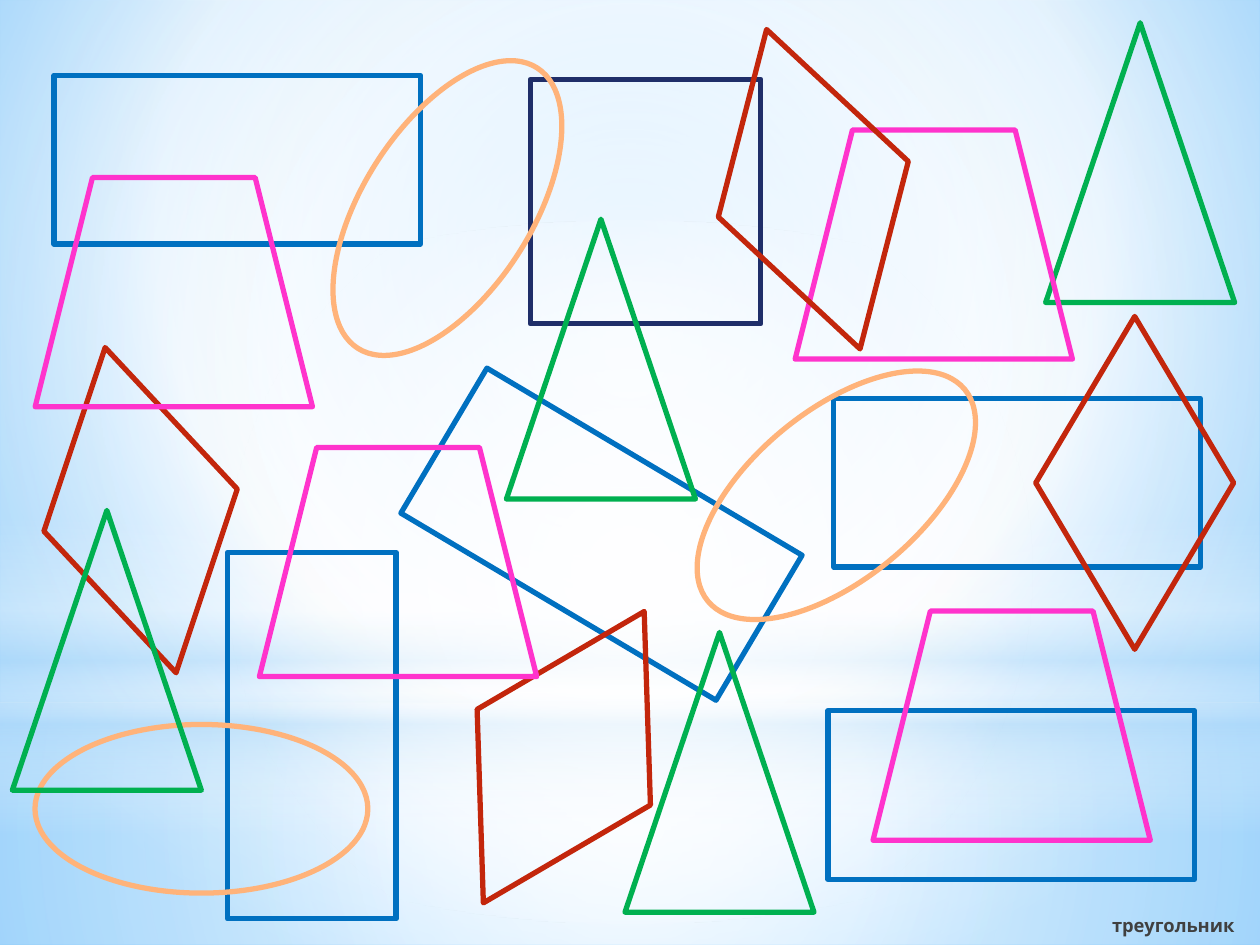
from dataclasses import dataclass

from lxml.etree import SubElement
from pptx import Presentation
from pptx.dml.color import RGBColor
from pptx.enum.shapes import MSO_SHAPE as Preset
from pptx.enum.text import MSO_ANCHOR, PP_ALIGN
from pptx.oxml import parse_xml
from pptx.oxml.ns import nsdecls, qn
from pptx.util import Cm, Pt


@dataclass(frozen=True)
class Theme:
    font: str = "Cabin"
    text_size: float = 10.5
    outline: float = 3
    text: str = "404040"
    navy: str = "1F2E69"
    blue: str = "0070C0"
    red: str = "C3260C"
    green: str = "00B050"
    peach: str = "FFB37A"
    pink: str = "FF33CC"
    white: str = "FFFFFF"
    pale: str = "B4DCFA"
    sky: str = "9ED5FF"
    deep_sky: str = "5BB9FF"


THEME = Theme()
WIDTH, HEIGHT = 25.4, 19.05
HORIZON = 14.17
CENTRE = (50, 50, 50, 50)

# Each glow: preset, box in cm, stops (position %, colour, opacity %), focus
GLOWS = [
    (Preset.RECTANGLE, (0, HORIZON, WIDTH, HEIGHT - HORIZON),
     [(0, THEME.white, 91), (37, THEME.white, 76), (100, THEME.pale, 79)], CENTRE),
    (Preset.RECTANGLE, (0, 0, WIDTH, HORIZON),
     [(0, THEME.white, 89), (48, THEME.white, 62), (100, THEME.pale, 79)], CENTRE),
    (Preset.RECTANGLE, (0, 10.46, WIDTH, 6.35),
     [(0, THEME.white, 0), (29, THEME.white, 30), (45, THEME.pale, 40),
      (55, THEME.white, 26), (65, THEME.pale, 60), (100, THEME.white, 0)], None),
    (Preset.OVAL, (0, 4.45, WIDTH, HORIZON),
     [(0, THEME.white, 100), (56, THEME.white, 0)], CENTRE),
]

# Each kind of figure: preset, colour, width and height in cm
SQUARE = (Preset.RECTANGLE, THEME.navy, 4.65, 4.93)
RECTANGLE = (Preset.RECTANGLE, THEME.blue, 7.39, 3.4)
DIAMOND = (Preset.DIAMOND, THEME.red, 3.99, 6.71)
TRIANGLE = (Preset.ISOSCELES_TRIANGLE, THEME.green, 3.81, 5.64)
ELLIPSE = (Preset.OVAL, THEME.peach, 3.4, 6.71)
TRAPEZOID = (Preset.TRAPEZOID, THEME.pink, 5.59, 4.62)

# Back to front: kind, then left, top and rotation of each figure
FIGURES = [
    (SQUARE, [(10.69, 1.6, 0)]),
    (RECTANGLE, [(1.09, 1.52, 0), (2.59, 13.13, 90), (16.81, 8.03, 0),
                 (8.43, 9.07, 30.7), (16.69, 14.33, 0)]),
    (DIAMOND, [(0.84, 6.93, 347.7), (9.37, 11.91, 28.9), (20.88, 6.38, 0)]),
    (TRIANGLE, [(10.21, 4.42, 0), (21.08, 0.46, 0), (12.6, 12.75, 0)]),
    (ELLIPSE, [(7.32, 0.84, 32.6), (2.36, 12.95, 90), (15.16, 6.63, 50.5)]),
    (TRAPEZOID, [(17.6, 12.32, 0), (5.23, 9.02, 0), (0.71, 3.58, 0),
                 (16.03, 2.62, 0)]),
    (DIAMOND, [(14.4, 0.46, 343.7)]),
    (TRIANGLE, [(0.25, 10.29, 0)]),
]


def set_all(target, values):
    for name, value in values.items():
        setattr(target, name, value)


def set_gradient(fill, element, stops, focus):
    """Fill with a circular gradient around focus, or a vertical one without it."""
    fill.background()
    gradient = parse_xml(f'<a:gradFill {nsdecls("a")} rotWithShape="1"/>')
    stop_list = SubElement(gradient, qn("a:gsLst"))
    for position, colour, opacity in stops:
        stop = SubElement(stop_list, qn("a:gs"), pos=str(position * 1000))
        shade = SubElement(stop, qn("a:srgbClr"), val=colour)
        if opacity < 100:
            SubElement(shade, qn("a:alpha"), val=str(opacity * 1000))
    if focus:
        course = SubElement(gradient, qn("a:path"), path="circle")
        sides = {side: str(part * 1000) for side, part in zip("ltrb", focus)}
        SubElement(course, qn("a:fillToRect"), **sides)
    else:
        SubElement(gradient, qn("a:lin"), ang="5400000", scaled="0")
    blank = element.find(".//" + qn("a:noFill"))
    blank.getparent().replace(blank, gradient)


def add_preset(page, preset, box):
    shape = page.shapes.add_shape(preset, *map(Cm, box))
    shape.shadow.inherit = False
    return shape


def draw_backdrop(page):
    stops = [(0, THEME.sky, 100), (60, THEME.white, 100), (100, THEME.deep_sky, 100)]
    set_gradient(page.background.fill, page.element, stops, (20, 10, 20, 60))
    for preset, box, stops, focus in GLOWS:
        glow = add_preset(page, preset, box)
        set_gradient(glow.fill, glow.element, stops, focus)
        glow.line.fill.background()


def draw_figures(page, box):
    left, top = box[:2]
    for (preset, colour, width, height), places in FIGURES:
        for x, y, rotation in places:
            figure = add_preset(page, preset, (left + x, top + y, width, height))
            figure.rotation = rotation
            figure.fill.background()
            figure.line.color.rgb = RGBColor.from_string(colour)
            figure.line.width = Pt(THEME.outline)


def draw_caption(page, box, text):
    frame = page.shapes.add_textbox(*map(Cm, box)).text_frame
    set_all(frame, {"word_wrap": True, "vertical_anchor": MSO_ANCHOR.TOP})
    para = frame.paragraphs[0]
    para.alignment = PP_ALIGN.LEFT
    span = para.add_run()
    span.text = text
    set_all(span.font, {"name": THEME.font, "size": Pt(THEME.text_size), "bold": True})
    span.font.color.rgb = RGBColor.from_string(THEME.text)


def main():
    deck = Presentation()
    set_all(deck, {"slide_width": Cm(WIDTH), "slide_height": Cm(HEIGHT)})
    page = deck.slides.add_slide(deck.slide_layouts[6])
    draw_backdrop(page)
    draw_figures(page, (0, 0, WIDTH, HEIGHT))
    draw_caption(page, (22.17, 18.31, 3.25, 0.99), "треугольник")
    deck.save("out.pptx")


if __name__ == "__main__":
    main()
